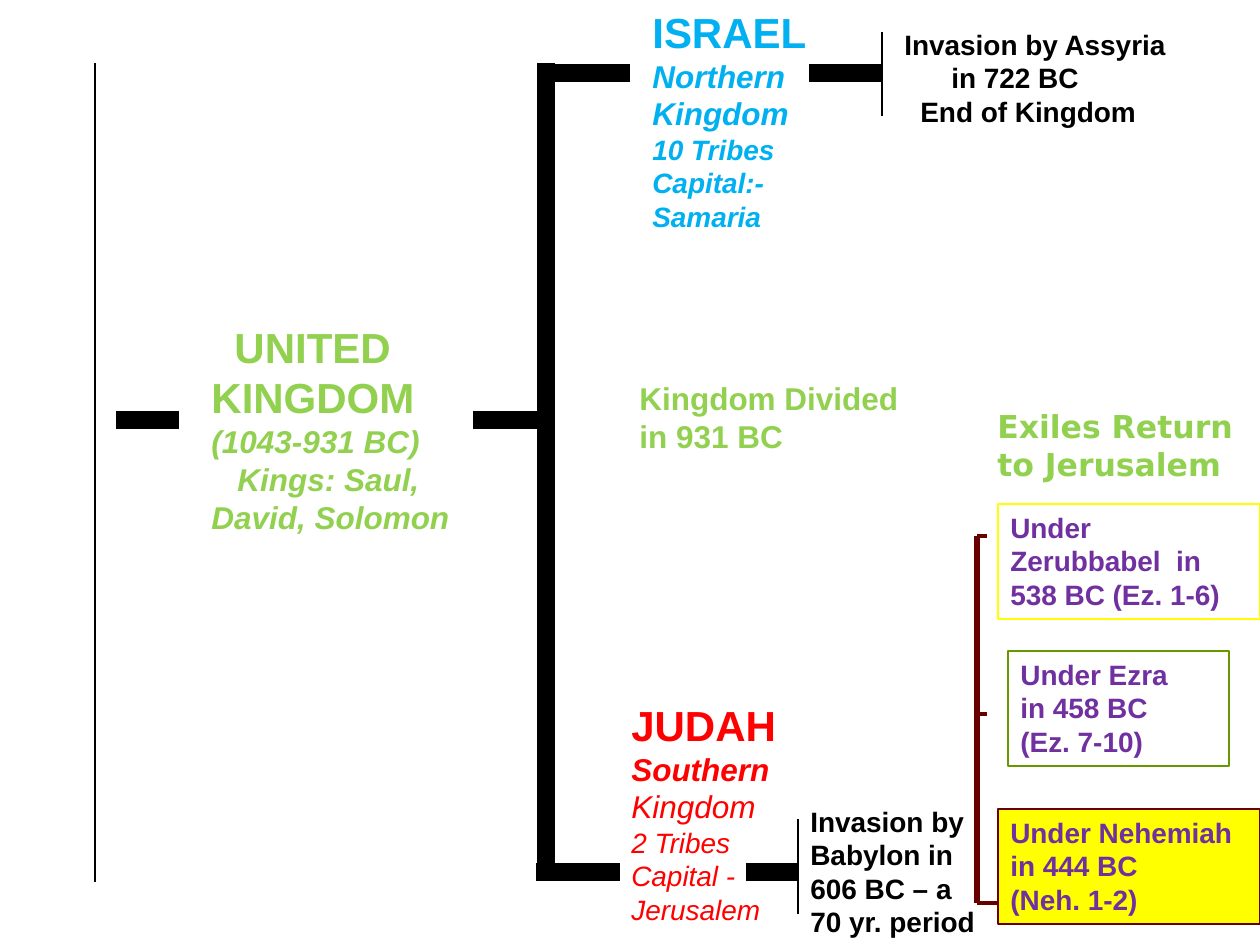
from lxml.etree import SubElement
from pptx import Presentation
from pptx.dml.color import RGBColor
from pptx.enum.shapes import MSO_CONNECTOR, MSO_SHAPE
from pptx.enum.text import MSO_ANCHOR, MSO_AUTO_SIZE, PP_ALIGN
from pptx.oxml.ns import qn
from pptx.util import Emu, Pt

BLACK, MAROON, GREEN = "000000", "680000", "92D050"
BLUE, RED, PURPLE, YELLOW = "00B0F0", "FF0000", "7030A0", "FFFF00"


def px(n):
    return Emu(round(n * 914400 / 126))


def rgb(value):
    return RGBColor.from_string(value)


def add_line(s, x1, y1, x2, y2, color=BLACK, width=10):
    c = s.shapes.add_connector(MSO_CONNECTOR.STRAIGHT, px(x1), px(y1), px(x2), px(y2))
    c.line.color.rgb = rgb(color)
    c.line.width = Pt(width)
    SubElement(c._element.spPr, qn("a:effectLst"))


def line(*runs, indent=0, **fmt):
    """One line of text: its runs as (text, format) pairs, and its first-line indent."""
    return [(r, fmt) if isinstance(r, str) else r for r in runs], indent


def write(sp, lines, color=BLACK, size=16, font="Arial", bold=True, italic=False, wrap=True):
    tf = sp.text_frame
    tf.word_wrap = wrap
    tf.auto_size = MSO_AUTO_SIZE.SHAPE_TO_FIT_TEXT
    tf.vertical_anchor = MSO_ANCHOR.TOP
    for i, item in enumerate(lines):
        runs, indent = line(item) if isinstance(item, str) else item
        p = tf.paragraphs[0] if i == 0 else tf.add_paragraph()
        p.alignment = PP_ALIGN.LEFT
        if indent:
            p._p.get_or_add_pPr().set("indent", str(px(indent)))
        for text, fmt in runs:
            r = p.add_run()
            r.text = text
            r.font.name = font
            r.font.size = Pt(fmt.get("size", size))
            r.font.bold = fmt.get("bold", bold)
            r.font.italic = fmt.get("italic", italic)
            r.font.color.rgb = rgb(color)


def add_text(s, x, y, w, h, lines, **fmt):
    write(s.shapes.add_textbox(px(x), px(y), px(w), px(h)), lines, **fmt)


def add_box(s, x, y, w, h, lines, border, fill=None):
    sp = s.shapes.add_shape(MSO_SHAPE.RECTANGLE, px(x), px(y), px(w), px(h))
    sp.shadow.inherit = False
    if fill:
        sp.fill.solid()
        sp.fill.fore_color.rgb = rgb(fill)
    else:
        sp.fill.background()
    sp.line.color.rgb = rgb(border)
    sp.line.width = Pt(0.75)
    write(sp, lines, color=PURPLE)


def add_kingdoms(s):
    title = {"size": 24, "italic": False}
    add_text(s, 199, 315, 273, 227, [
        line("UNITED", indent=23, **title),
        line("KINGDOM", **title),
        "(1043-931 BC)",
        line("Kings: Saul, David, Solomon", indent=26),
    ], color=GREEN, size=18, italic=True)
    add_text(s, 640, 0, 199, 239, [
        line("ISRAEL", **title),
        line("Northern", size=18),
        line("Kingdom", size=18),
        "10 Tribes",
        "Capital:- Samaria",
    ], color=BLUE, italic=True)
    add_text(s, 619, 693, 179, 239, [
        line("JUDAH", bold=True, **title),
        line(("Southern", {"size": 18, "bold": True}), " Kingdom", size=18),
        "2 Tribes",
        "Capital -",
        "Jerusalem",
    ], color=RED, bold=False, italic=True)


def add_events(s):
    add_text(s, 892, 21, 315, 113, [
        "Invasion by Assyria",
        line("in 722 BC", indent=47),
        line("End of Kingdom", indent=16),
    ])
    add_text(s, 798, 798, 199, 147,
             ["Invasion by", "Babylon in", "606 BC – a 70 yr. period"])
    add_text(s, 627, 373, 285, 88, ["Kingdom Divided", "in 931 BC"],
             color=GREEN, size=18, wrap=False)
    add_text(s, 985, 401, 275, 88, ["Exiles Return", "to Jerusalem"],
             color=GREEN, size=18, font="DejaVu Sans")


def main():
    prs = Presentation()
    prs.slide_width, prs.slide_height = px(1260), px(945)
    s = prs.slides.add_slide(prs.slide_layouts[6])

    # Thick branches of the kingdom tree
    for ends in [(116, 420, 179, 420), (473, 420, 546, 420),
                 (546, 441, 546, 63), (546, 420, 546, 872),
                 (546, 73, 630, 73), (536, 872, 620, 872),
                 (746, 872, 798, 872), (809, 73, 882, 73)]:
        add_line(s, *ends)

    # Thin bars at the start and at each invasion
    for x, top, bottom in [(95, 63, 882), (882, 32, 116), (798, 819, 914)]:
        add_line(s, x, top, x, bottom, width=0.75)

    # Bracket of the returns
    add_line(s, 977, 536, 977, 903, MAROON, 3)
    for y, end in [(536, 987), (714, 987), (903, 998)]:
        add_line(s, 977, y, end, y, MAROON, 2.25)

    add_kingdoms(s)
    add_events(s)

    # Returns from exile
    add_box(s, 998, 504, 262, 115, ["Under Zerubbabel  in 538 BC (Ez. 1-6)"], YELLOW)
    add_box(s, 1008, 651, 221, 115, ["Under Ezra", "in 458 BC", "(Ez. 7-10)"], "669900")
    add_box(s, 998, 809, 262, 115, ["Under Nehemiah", "in 444 BC", "(Neh. 1-2)"],
            MAROON, fill=YELLOW)

    prs.save("out.pptx")


if __name__ == "__main__":
    main()
